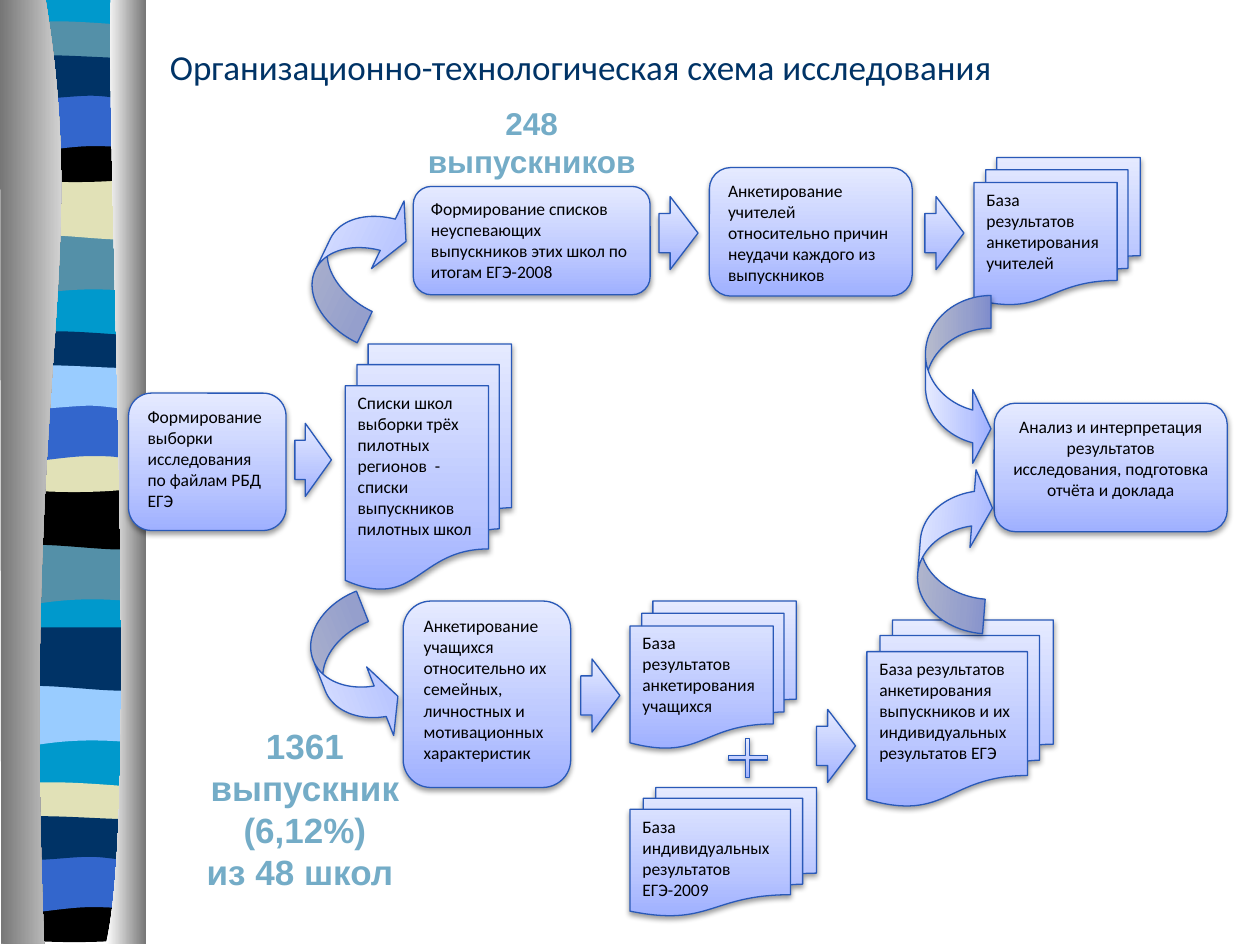
from copy import deepcopy
from dataclasses import dataclass

from lxml import etree
from pptx import Presentation
from pptx.dml.color import RGBColor
from pptx.enum import shapes, text
from pptx.oxml.ns import qn
from pptx.util import Pt

PX = 9144  # 100 px to the inch


@dataclass(frozen=True)
class Theme:
    navy: str = "003366"
    teal: str = "5490A8"
    sand: str = "E1E1B7"
    black: str = "000000"
    blue: str = "3366CC"
    sky: str = "99CCFF"
    cyan: str = "0099CC"
    grey: str = "767676"
    white: str = "FFFFFF"
    outline: str = "2959B8"
    accent: str = "74ACC7"
    step_stops: tuple = ((0, "9FB0FF"), (0.35, "BBC7FF"), (1, "E5EAFF"))
    body: str = "Calibri"
    display: str = "Arial"
    step_size: int = 10
    count_size: int = 18
    title_size: int = 20


theme = Theme()
rgb = RGBColor.from_string
deck = Presentation()
deck.slide_width, deck.slide_height = 1000 * PX, 750 * PX
page = deck.slides.add_slide(deck.slide_layouts[6])


def add_outline(start, segments, dx=0, dy=0):
    """Draw a closed outline; a segment is a line (x, y) or a cubic curve (six numbers)."""
    points = [start] + [segment[i:i + 2] for segment in segments
                        for i in range(0, len(segment), 2)]
    points = [((x + dx) * PX, min(y + dy, 749) * PX) for x, y in points]
    builder = page.shapes.build_freeform(*points[0], scale=1.0)
    builder.add_line_segments(points[1:], close=True)
    shape = builder.convert_to_shape()
    shape.shadow.inherit = False
    shape.line.fill.background()

    # Join the three points of each curve into one Bézier segment
    contour = shape._element.spPr.find(".//" + qn("a:path"))
    lines = iter(contour.findall(qn("a:lnTo")))
    for segment in segments:
        nodes = [next(lines) for _ in range(len(segment) // 2)]
        if len(nodes) == 3:
            curve = etree.Element(qn("a:cubicBezTo"))
            nodes[0].addprevious(curve)
            for node in nodes:
                curve.append(node[0])
                contour.remove(node)
    return shape


def write(box, lines, size, font, color, align=text.PP_ALIGN.LEFT, bold=False, after=0):
    """Fill the box with one paragraph per line and return the runs."""
    frame = box.text_frame
    frame.word_wrap = True
    spans = []
    for index, line in enumerate(lines):
        para = frame.add_paragraph() if index else frame.paragraphs[0]
        para.alignment = align
        para.space_after = Pt(after)
        span = para.add_run()
        span.text = line
        span.font.size, span.font.name, span.font.bold = Pt(size), font, bold
        span.font.color.rgb = rgb(color)
        spans.append(span)
    return spans


# Striped ribbon: six band outlines, repeated down the page in other colours
base = add_outline((114, -1), [(114, 747), (6, 747), (6, -1)])
base.fill.solid()
base.fill.fore_color.rgb = rgb(theme.cyan)

bands = [
    ((114, 185), [(114, 232), (39, 224, 24, 240, 5, 232), (5, 185)]),
    ((114, 140), [(114, 188), (96, 195, 39, 182, 6, 188), (6, 140)]),
    ((114, 21), [(114, 45), (96, 49, 24, 49, 6, 45), (6, 21),
                 (13, 16, 29, 17, 47, 17), (65, 17, 100, 20, 114, 21)]),
    ((114, 108), [(114, 140), (96, 146, 24, 146, 5, 140), (5, 108),
                  (72, 113, 91, 108, 114, 108)]),
    ((114, 74), [(114, 122), (97, 116, 90, 116, 72, 116),
                 (54, 116, 22, 122, 6, 122), (6, 74)]),
    ((114, 46), [(114, 76), (107, 82, 90, 76, 72, 76), (54, 76, 17, 82, 6, 76), (6, 46),
                 (21, 41, 79, 46, 97, 46), (115, 46, 111, 46, 114, 46)]),
]
ribbon = [
    (0, (0, 0, 0, 0, 0, 0),
     (theme.teal, theme.sand, theme.teal, theme.black, theme.blue, theme.navy)),
    (-1, (246, 246, 246, 246, 246, 246),
     (theme.teal, theme.black, theme.navy, theme.sand, theme.blue, theme.sky)),
    (-1, (358, 358, 604, 604, 604, 604),
     (theme.sky, theme.navy, theme.sand, theme.black, theme.blue, theme.navy)),
]
for shift, drops, colors in ribbon:
    for (start, segments), drop, color in zip(bands, drops, colors):
        band = add_outline(start, segments, shift, drop)
        band.fill.solid()
        band.fill.fore_color.rgb = rgb(color)

left_edge = add_outline((36, -1), [(72, 216, 17, 296, 35, 749), (1, 749), (0, -1)])
right_edge = add_outline((88, -1), [(84, 125, 111, 646, 84, 749), (116, 749), (116, 0)])
for edge, colors in ((left_edge, (theme.grey, theme.white)),
                     (right_edge, (theme.white, theme.grey))):
    edge.fill.gradient()
    edge.fill.gradient_angle = 0
    for stop, position, color in zip(edge.fill.gradient_stops, (0, 1), colors):
        stop.position = position
        stop.color.rgb = rgb(color)

# Headings
title = page.shapes.add_textbox(125 * PX, 31 * PX, 850 * PX, 44 * PX)
title.text_frame.vertical_anchor = text.MSO_ANCHOR.MIDDLE
write(title, ["Организационно-технологическая схема исследования"],
      theme.title_size, theme.body, theme.navy)

counts = [
    ((125, 570, 234, 145), ["1361 выпускник (6,12%)", "из 48 школ "], theme.title_size),
    ((328, 78, 188, 71), ["248 выпускников"], theme.count_size),
]
for place, lines, size in counts:
    box = page.shapes.add_textbox(*(n * PX for n in place))
    for span in write(box, lines, size, theme.display, theme.accent,
                      text.PP_ALIGN.CENTER, True):
        stroke = etree.Element(qn("a:ln"), w="12700")
        solid = etree.SubElement(stroke, qn("a:solidFill"))
        etree.SubElement(solid, qn("a:srgbClr"), val=theme.navy)
        span.font._element.insert(0, stroke)

# Scheme: preset, place, lines, adjustments, rotation, flipped
kinds = shapes.MSO_SHAPE
step, files = kinds.ROUNDED_RECTANGLE, kinds.FLOWCHART_MULTIDOCUMENT
analysis = "Анализ и интерпретация результатов исследования, подготовка отчёта и доклада"
scheme = [(kind, place, lines, (), 0, False) for kind, place, lines in [
    (step, (102, 312, 125, 109), ["Формирование выборки исследования по файлам РБД ЕГЭ"]),
    (files, (274, 273, 132, 195), ["Списки школ выборки трёх пилотных регионов  - списки "
                                   "выпускников  пилотных школ"]),
    (step, (328, 148, 188, 86), ["Формирование списков неуспевающих  выпускников этих школ "
                                 "по итогам ЕГЭ-2008"]),
    (step, (563, 133, 161, 102), ["Анкетирование учителей относительно причин неудачи "
                                  "каждого из выпускников"]),
    (files, (773, 125, 132, 117), ["База результатов анкетирования учителей"]),
    (step, (789, 320, 185, 102), [analysis]),
    (step, (320, 477, 133, 148), ["Анкетирование учащихся относительно их семейных, "
                                  "личностных и мотивационных характеристик"]),
    (files, (500, 477, 132, 117), ["База результатов анкетирования учащихся"]),
    (files, (500, 625, 148, 102), ["База индивидуальных результатов", "ЕГЭ-2009"]),
    (files, (688, 492, 148, 148), ["База результатов анкетирования выпускников и их "
                                   "индивидуальных результатов ЕГЭ"]),
]]
scheme += [(kinds.RIGHT_ARROW, (x, y, width, 58), [], (0.536, 0.714), 0, False)
           for x, y, width in [(234, 336, 29), (523, 156, 31), (734, 156, 31),
                               (461, 523, 31), (648, 563, 31)]]
scheme.append((kinds.CROSS, (578, 586, 31, 31), [], (0.448,), 0, False))
scheme += [(kinds.CURVED_DOWN_ARROW, place, [], (0.5, 1.124, 0.278), turn, flipped)
           for place, turn, flipped in [((225, 179, 119, 55), 295.7, False),
                                        ((221, 508, 119, 52), 68.5, True),
                                        ((692, 408, 131, 55), 274.5, False),
                                        ((693, 276, 135, 52), 90, True)]]

for kind, place, lines, adjustments, turn, flipped in scheme:
    shape = page.shapes.add_shape(kind, *(n * PX for n in place))
    for index, value in enumerate(adjustments):
        shape.adjustments[index] = value
    shape.rotation = turn
    properties = shape._element.spPr
    if flipped:
        properties.find(qn("a:xfrm")).set("flipV", "1")

    shape.fill.gradient()
    shape.fill.gradient_angle = 90
    stop_list = properties.find(".//" + qn("a:gsLst"))
    stop_list.insert(1, deepcopy(stop_list[0]))
    for stop, (position, color) in zip(shape.fill.gradient_stops, theme.step_stops):
        stop.position = position
        stop.color.rgb = rgb(color)
    shape.line.color.rgb = rgb(theme.outline)
    shape.line.width = Pt(0.75)

    shape.shadow.inherit = False
    shadow = etree.SubElement(properties.find(qn("a:effectLst")), qn("a:outerShdw"),
                              blurRad="40000", dist="20000", dir="5400000", rotWithShape="0")
    tint = etree.SubElement(shadow, qn("a:srgbClr"), val=theme.black)
    etree.SubElement(tint, qn("a:alpha"), val="38000")

    if lines:
        shape.text_frame.vertical_anchor = text.MSO_ANCHOR.TOP
        align = text.PP_ALIGN.CENTER if lines == [analysis] else text.PP_ALIGN.LEFT
        write(shape, lines, theme.step_size, theme.body, theme.black, align,
              after=10 if len(lines) == 1 else 0)

deck.save("out.pptx")
